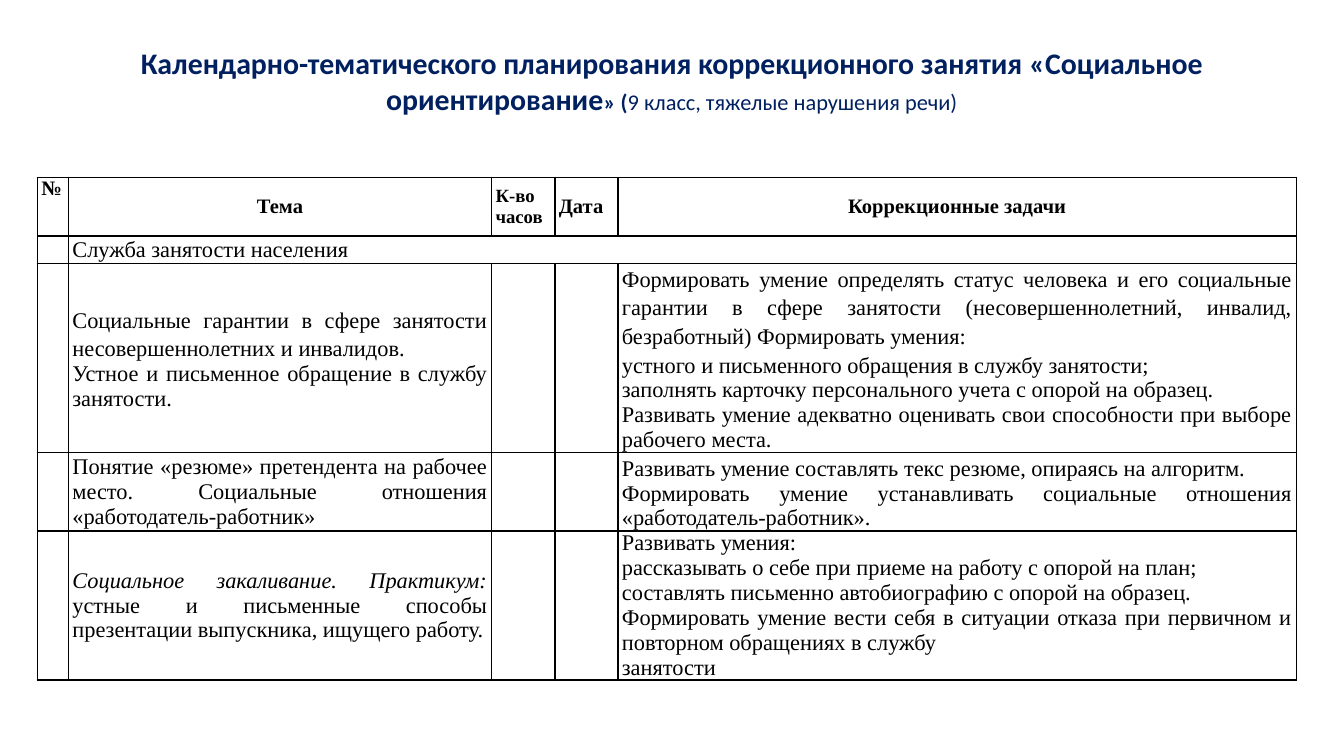
import copy

from lxml import etree
from pptx import Presentation
from pptx.dml.color import RGBColor
from pptx.enum import text
from pptx.oxml.ns import qn
from pptx.util import Pt

NAVY, BLACK = "002060", "000000"
SERIF = "Times New Roman"
JUSTIFY, CENTER = text.PP_ALIGN.JUSTIFY, text.PP_ALIGN.CENTER
COLUMNS = [16.6, 226.8, 33.8, 33.8, 363.6]
ROWS = [31.6, 12.2, 95.8, 39.6, 75.6]
LOOSE = 1.15

# Each header cell: lines, size, alignment
HEADER = [
    (["№"], 11, JUSTIFY),
    (["Тема"], 11, CENTER),
    (["К-во", "часов"], 10, JUSTIFY),
    (["Дата"], 11, JUSTIFY),
    (["Коррекционные задачи"], 11, CENTER),
]
SECTION = "Служба занятости населения"
# Each lesson: topic and tasks, as (paragraph, line spacing)
LESSONS = [
    ([("Социальные гарантии в сфере занятости несовершеннолетних и инвалидов.", LOOSE),
      ("Устное и письменное обращение в службу занятости.", None)],
     [("Формировать умение определять статус человека и его социальные гарантии в сфере "
       "занятости (несовершеннолетний, инвалид, безработный) Формировать умения:", LOOSE),
      ("устного и письменного обращения в службу занятости;", LOOSE),
      ("заполнять карточку персонального учета с опорой на образец.", None),
      ("Развивать умение адекватно оценивать свои способности при выборе рабочего места.",
       None)]),
    ([("Понятие «резюме» претендента на рабочее место. Социальные отношения "
       "«работодатель-работник»", None)],
     [("Развивать умение составлять текс резюме, опираясь на алгоритм.", LOOSE),
      ("Формировать умение устанавливать социальные отношения «работодатель-работник».",
       None)]),
    ([("Социальное закаливание. Практикум:", None)],
     [("Развивать умения:", None),
      ("рассказывать о себе при приеме на работу с опорой на план;", None),
      ("составлять письменно автобиографию с опорой на образец.", None),
      ("Формировать умение вести себя в ситуации отказа при первичном и повторном "
       "обращениях в службу", None),
      ("занятости", None)]),
]
PRACTICE = " устные и письменные способы презентации выпускника, ищущего работу."


def rgb(value):
    return RGBColor.from_string(value)


def add_run(p, content, size=12, font=SERIF, color=BLACK, bold=False, italic=False):
    r = p.add_run()
    r.text = content
    r.font.size, r.font.name = Pt(size), font
    r.font.bold, r.font.italic = bold, italic
    r.font.color.rgb = rgb(color)
    return r


def add_break(p, r):
    """Add a line break that has the text format of run r."""
    p.add_line_break()
    p._p.findall(qn("a:br"))[-1].append(copy.deepcopy(r._r.find(qn("a:rPr"))))


def add_title(s):
    sp = s.shapes.title
    sp.left, sp.top, sp.width, sp.height = Pt(36.7), Pt(15.1), Pt(646.6), Pt(51.1)
    tf = sp.text_frame
    tf.auto_size = text.MSO_AUTO_SIZE.NONE
    tf.word_wrap = True
    tf.vertical_anchor = text.MSO_ANCHOR.MIDDLE
    p = tf.paragraphs[0]
    p.alignment = CENTER
    style = dict(font="Calibri", color=NAVY)
    add_break(p, add_run(p, "", 16, bold=True, **style))
    add_run(p, "Календарно-тематического планирования коррекционного занятия "
               "«Социальное ориентирование", 16, bold=True, **style)
    add_run(p, "» (", bold=True, **style)
    add_break(p, add_run(p, "9 класс, тяжелые нарушения речи)", **style))
    add_run(p, " ", **style)


def add_borders(cell):
    tc_pr = cell._tc.get_or_add_tcPr()
    for i, side in enumerate(("lnL", "lnR", "lnT", "lnB")):
        ln = etree.Element(qn(f"a:{side}"), w=str(Pt(1)))
        fill = etree.SubElement(ln, qn("a:solidFill"))
        etree.SubElement(fill, qn("a:srgbClr"), val=BLACK)
        tc_pr.insert(i, ln)


def format_cell(cell):
    cell.margin_left = cell.margin_right = Pt(2.2)
    cell.margin_top = cell.margin_bottom = Pt(0)
    cell.vertical_anchor = text.MSO_ANCHOR.MIDDLE
    cell.fill.background()
    add_borders(cell)
    # Keeps empty cells from stretching their rows
    etree.SubElement(cell.text_frame.paragraphs[0]._p, qn("a:endParaRPr"), sz="1200")


def fill_cell(cell, paragraphs, align=JUSTIFY, **style):
    """Write (text, line spacing) pairs as paragraphs."""
    tf = cell.text_frame
    for i, (content, spacing) in enumerate(paragraphs):
        p = tf.add_paragraph() if i else tf.paragraphs[0]
        p.alignment = align
        if spacing:
            p.line_spacing = spacing
        add_run(p, content, **style)


def add_plan(s):
    frame = s.shapes.add_table(len(ROWS), len(COLUMNS), Pt(20), Pt(95),
                               Pt(sum(COLUMNS)), Pt(sum(ROWS)))
    table = frame.table
    table.first_row = table.horz_banding = False
    for column, width in zip(table.columns, COLUMNS):
        column.width = Pt(width)
    for row, height in zip(table.rows, ROWS):
        row.height = Pt(height)
    for cell in table.iter_cells():
        format_cell(cell)

    for col, (lines, size, align) in enumerate(HEADER):
        fill_cell(table.cell(0, col), [(line, None) for line in lines], align,
                  size=size, bold=True)
    table.cell(0, 0).vertical_anchor = text.MSO_ANCHOR.TOP

    table.cell(1, 1).merge(table.cell(1, 4))
    fill_cell(table.cell(1, 1), [(SECTION, None)])

    last = len(ROWS) - 1
    for row, (topic, tasks) in enumerate(LESSONS, start=2):
        fill_cell(table.cell(row, 1), topic, italic=row == last)
        fill_cell(table.cell(row, 4), tasks)
    add_run(table.cell(last, 1).text_frame.paragraphs[0], PRACTICE)


def main():
    prs = Presentation()
    prs.slide_width, prs.slide_height = Pt(720), Pt(405)
    s = prs.slides.add_slide(prs.slide_layouts[5])
    add_title(s)
    add_plan(s)
    prs.save("out.pptx")


if __name__ == "__main__":
    main()
